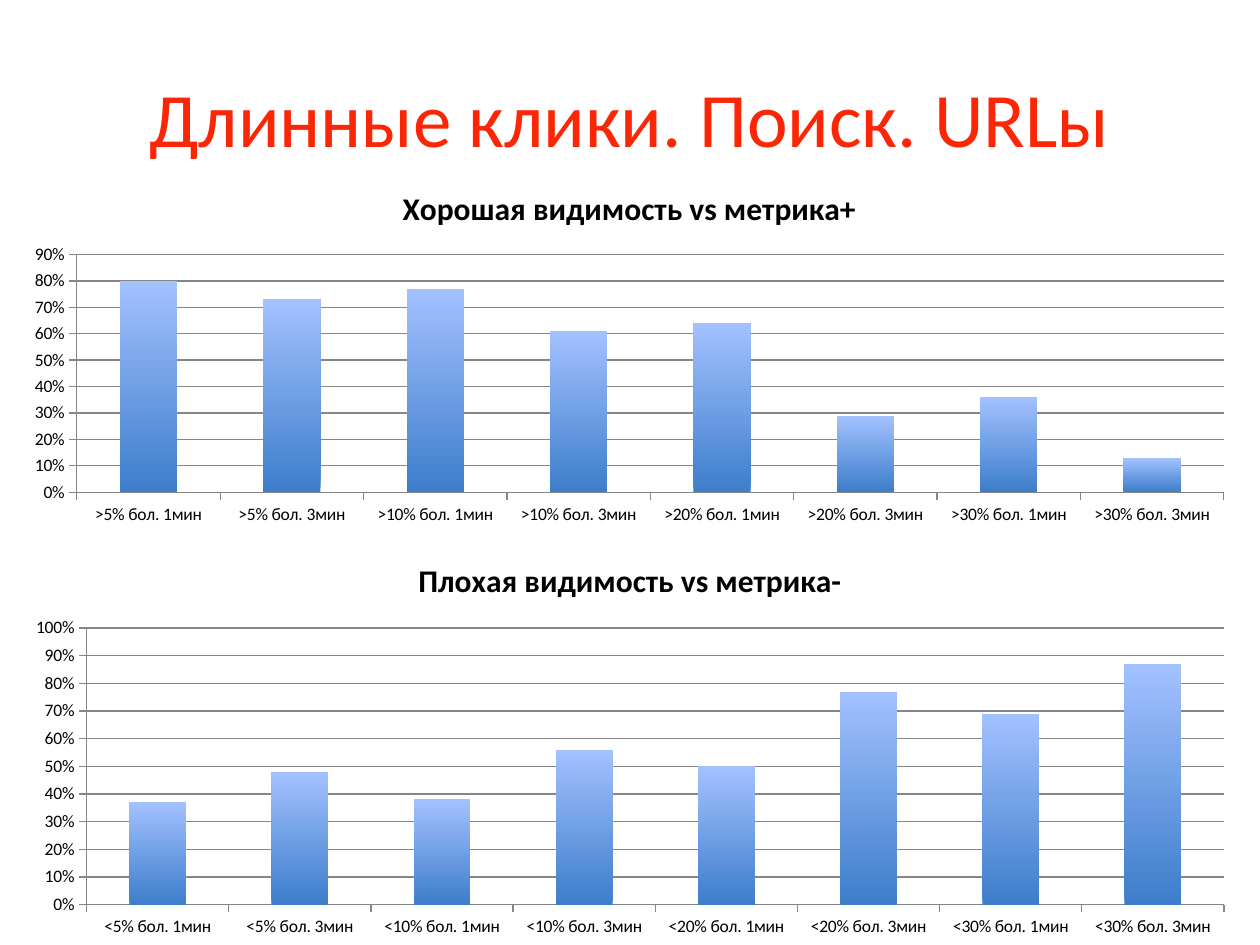
from pptx import Presentation
from pptx.chart.data import CategoryChartData
from pptx.dml.color import RGBColor
from pptx.enum.chart import XL_CHART_TYPE, XL_TICK_MARK
from pptx.enum.text import MSO_ANCHOR, PP_ALIGN
from pptx.util import Inches, Pt

FONT = "Calibri"
THRESHOLDS = (5, 10, 20, 30)
MINUTES = (1, 3)
CHARTS = [
    {"heading": "Хорошая видимость vs метрика+", "sign": ">", "top": 0.9,
     "shares": (0.8, 0.73, 0.77, 0.61, 0.64, 0.29, 0.36, 0.13),
     "box": (0.08, 1.32, 9.83, 2.9)},
    {"heading": "Плохая видимость vs метрика-", "sign": "<", "top": 1,
     "shares": (0.37, 0.48, 0.38, 0.56, 0.5, 0.77, 0.69, 0.87),
     "box": (0.09, 4.27, 9.82, 3.23)},
]


def rgb(value):
    """Return the colour for a hex string."""
    return RGBColor.from_string(value)


def style_font(font, size, color, bold=False):
    """Apply the slide typeface with the given size and colour."""
    formats = {"name": FONT, "size": Pt(size), "bold": bold}
    for attribute, value in formats.items():
        setattr(font, attribute, value)
    font.color.rgb = rgb(color)


def place_title(slide, text, box):
    """Fill and position the title placeholder."""
    heading = slide.shapes.title
    for side, value in zip(("left", "top", "width", "height"), box):
        setattr(heading, side, Inches(value))
    heading.text_frame.vertical_anchor = MSO_ANCHOR.MIDDLE
    paragraph = heading.text_frame.paragraphs[0]
    paragraph.alignment = PP_ALIGN.CENTER
    run = paragraph.add_run()
    run.text = text
    style_font(run.font, 44, "FB2606")


def style_axes(chart, top):
    """Format both axes and the gridlines of a chart."""
    values = chart.value_axis
    formats = {"minimum_scale": 0, "maximum_scale": top, "major_unit": 0.1,
               "has_major_gridlines": True}
    for attribute, value in formats.items():
        setattr(values, attribute, value)
    values.tick_labels.number_format = "0%"
    values.tick_labels.number_format_is_linked = False
    for axis in (values, chart.category_axis):
        axis.major_tick_mark = XL_TICK_MARK.OUTSIDE
        axis.minor_tick_mark = XL_TICK_MARK.NONE
        style_font(axis.tick_labels.font, 10, "000000")
    for line in (values.format.line, values.major_gridlines.format.line,
                 chart.category_axis.format.line):
        line.color.rgb = rgb("868686")
        line.width = Pt(0.75)


def place_chart(slide, heading, sign, top, shares, box):
    """Add a column chart of shares by click threshold and duration."""
    clicks = CategoryChartData(number_format="0%")
    clicks.categories = [f"{sign}{threshold}% бол. {minute}мин"
                         for threshold in THRESHOLDS for minute in MINUTES]
    clicks.add_series("Series 1", shares)
    chart = slide.shapes.add_chart(
        XL_CHART_TYPE.COLUMN_CLUSTERED, *map(Inches, box), clicks).chart
    style_font(chart.font, 10, "000000")
    chart.has_legend = False
    chart.has_title = True
    chart.chart_title.include_in_layout = False
    run = chart.chart_title.text_frame.paragraphs[0].add_run()
    run.text = heading
    style_font(run.font, 18, "000000", bold=True)
    style_axes(chart, top)

    columns = chart.plots[0]
    columns.gap_width = 150
    columns.vary_by_categories = False
    fill = columns.series[0].format.fill
    fill.gradient()
    fill.gradient_angle = 90
    for stop, color in zip(fill.gradient_stops, ("3D7ECB", "A3C1FF")):
        stop.color.rgb = rgb(color)


def main():
    """Build and save the slide."""
    deck = Presentation()
    deck.slide_width, deck.slide_height = Inches(10), Inches(7.5)
    slide = deck.slides.add_slide(deck.slide_layouts[5])
    place_title(slide, "Длинные клики. Поиск. URLы", (0.5, 0.3, 9, 1.25))
    for chart in CHARTS:
        place_chart(slide, **chart)
    deck.save("out.pptx")


if __name__ == "__main__":
    main()
